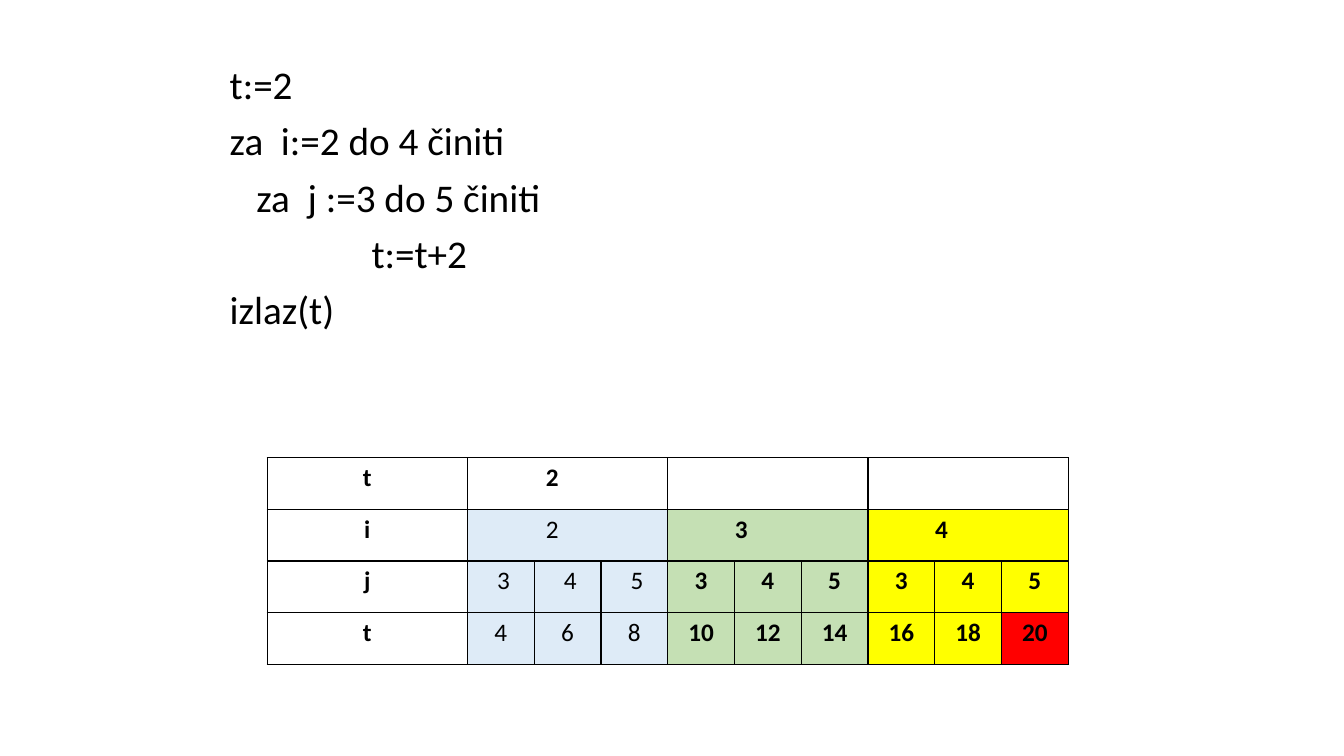
"""Build a slide tracing a nested loop: its pseudocode above a table of variable values."""
from dataclasses import dataclass

from lxml.etree import SubElement
from pptx import Presentation
from pptx.dml.color import RGBColor
from pptx.enum.text import PP_ALIGN as Align
from pptx.oxml import parse_xml
from pptx.oxml.ns import nsdecls, qn
from pptx.slide import Slide
from pptx.table import Table, _Cell as TableCell
from pptx.text.text import _Paragraph as Paragraph
from pptx.util import Pt

BLACK, WHITE, RED = "000000", "FFFFFF", "FF0000"
LABEL_WIDTH, STEP_WIDTH, ROW_HEIGHT = 143.1, 47.7, 36.9
STEPS = 3


@dataclass(frozen=True)
class CodeLine:
    text: str
    indent: float = 0


@dataclass(frozen=True)
class OuterPass:
    i: str
    fill: str
    results: tuple[str, ...]
    bold: bool = True
    start: str = ""
    i_indent: float = 40.7
    j_indent: float = 0


@dataclass(frozen=True)
class Entry:
    row: int
    column: int
    text: str
    fill: str = WHITE
    bold: bool = True
    align: Align = Align.CENTER
    indent: float = 0
    span: int = 1


CODE = (
    CodeLine("t:=2"),
    CodeLine("za  i:=2 do 4 činiti"),
    CodeLine("za  j :=3 do 5 činiti", 19),
    CodeLine("t:=t+2", 101.3),
    CodeLine("izlaz(t)"),
)
LABELS = ("t", "i", "j", "t")
J_VALUES = ("3", "4", "5")
PASSES = (
    OuterPass("2", "DEEBF7", ("4", "6", "8"), False, "2", 48.8, 4),
    OuterPass("3", "C5E0B4", ("10", "12", "14")),
    OuterPass("4", "FFFF00", ("16", "18", "20")),
)


def color(value: str) -> RGBColor:
    return RGBColor.from_string(value)


def write(paragraph: Paragraph, text: str, size: float, bold: bool, indent: float) -> None:
    font_format = {"name": "Calibri", "size": Pt(size), "bold": bold}
    for name, value in font_format.items():
        setattr(paragraph.font, name, value)
    paragraph.font.color.rgb = color(BLACK)
    paragraph._p.get_or_add_pPr().set("marL", str(Pt(indent)))
    if text:
        run = paragraph.add_run()
        run.text = text
        for name, value in font_format.items():
            setattr(run.font, name, value)
        run.font.color.rgb = color(BLACK)


def draw_code(slide: Slide) -> None:
    code = slide.shapes.add_textbox(Pt(157), Pt(43.2), Pt(648), Pt(459.4)).text_frame
    code.word_wrap = True
    line_format = {"line_spacing": 0.9, "space_before": Pt(10)}
    for number, line in enumerate(CODE):
        paragraph = code.add_paragraph() if number else code.paragraphs[0]
        for name, value in line_format.items():
            setattr(paragraph, name, value)
        write(paragraph, line.text, 28, False, line.indent)


def draw_borders(cell: TableCell) -> None:
    properties = cell._tc.get_or_add_tcPr()
    for position, side in enumerate(("lnL", "lnR", "lnT", "lnB")):
        border = parse_xml(f'<a:{side} {nsdecls("a")} w="{Pt(1)}"/>')
        fill = SubElement(border, qn("a:solidFill"))
        SubElement(fill, qn("a:srgbClr"), val=BLACK)
        properties.insert(position, border)


def trace_entries() -> list[Entry]:
    entries = [Entry(row, 0, label) for row, label in enumerate(LABELS)]
    for number, outer in enumerate(PASSES):
        first = 1 + number * STEPS
        entries += [
            Entry(0, first, outer.start, align=Align.LEFT, indent=48.8, span=STEPS),
            Entry(1, first, outer.i, outer.fill, outer.bold, Align.LEFT, outer.i_indent, STEPS),
        ]
        for step, (j, result) in enumerate(zip(J_VALUES, outer.results)):
            final = outer is PASSES[-1] and step == STEPS - 1
            entries += [
                Entry(2, first + step, j, outer.fill, outer.bold, indent=outer.j_indent),
                Entry(3, first + step, result, RED if final else outer.fill, outer.bold),
            ]
    return entries


def draw_entry(trace: Table, entry: Entry) -> None:
    cell = trace.cell(entry.row, entry.column)
    for offset in range(entry.span):
        part = trace.cell(entry.row, entry.column + offset)
        part.fill.solid()
        part.fill.fore_color.rgb = color(entry.fill)
        draw_borders(part)
    if entry.span > 1:
        cell.merge(trace.cell(entry.row, entry.column + entry.span - 1))
    paragraph = cell.text_frame.paragraphs[0]
    paragraph.alignment = entry.align
    write(paragraph, entry.text, 18, entry.bold, entry.indent)


def draw_trace(slide: Slide) -> None:
    step_count = STEPS * len(PASSES)
    trace = slide.shapes.add_table(
        len(LABELS), 1 + step_count, Pt(190.8), Pt(326.9),
        Pt(LABEL_WIDTH + step_count * STEP_WIDTH), Pt(len(LABELS) * ROW_HEIGHT),
    ).table
    for name, value in {"first_row": False, "horz_banding": False}.items():
        setattr(trace, name, value)
    for number, column in enumerate(trace.columns):
        column.width = Pt(STEP_WIDTH if number else LABEL_WIDTH)
    for row in trace.rows:
        row.height = Pt(ROW_HEIGHT)
    for entry in trace_entries():
        draw_entry(trace, entry)


def main() -> None:
    presentation = Presentation()
    for name, value in {"slide_width": Pt(960), "slide_height": Pt(540)}.items():
        setattr(presentation, name, value)
    slide = presentation.slides.add_slide(presentation.slide_layouts[6])
    draw_code(slide)
    draw_trace(slide)
    presentation.save("out.pptx")


if __name__ == "__main__":
    main()
